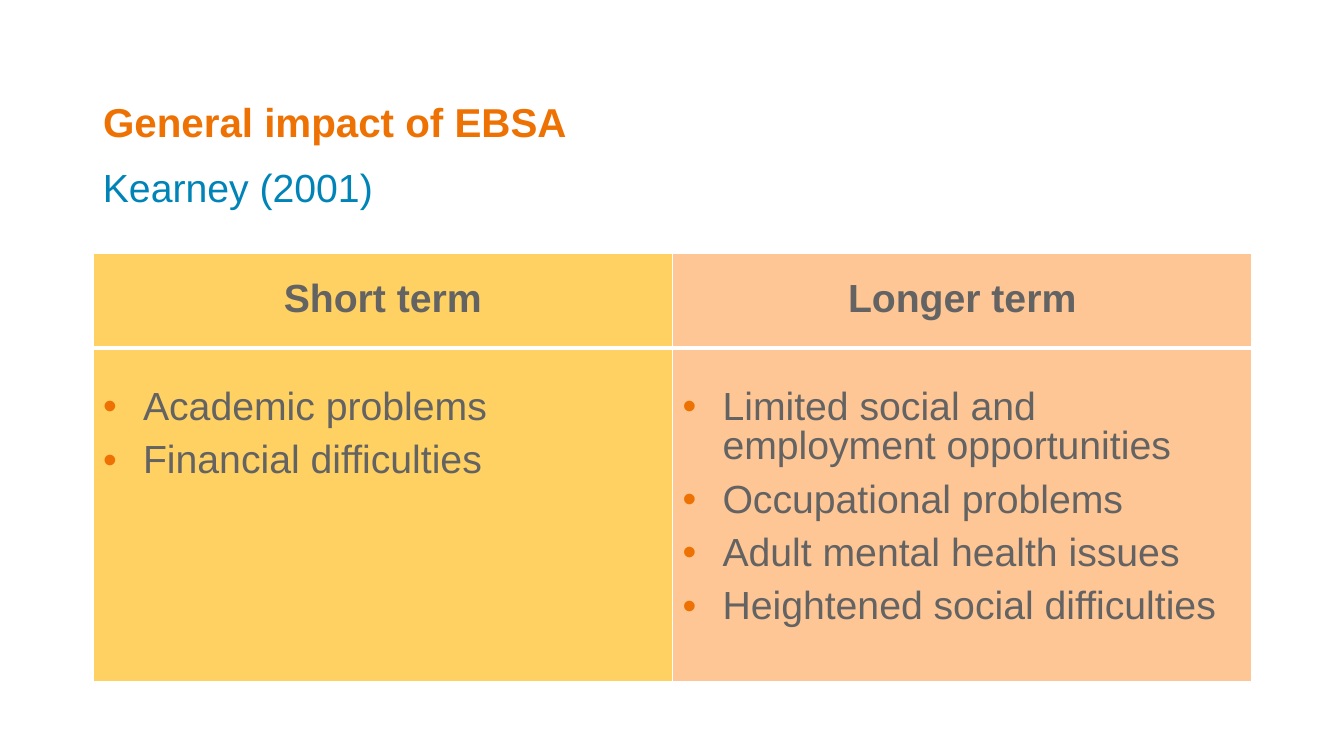
from dataclasses import dataclass
from typing import NamedTuple

from lxml.etree import SubElement
from pptx import Presentation
from pptx.dml.color import RGBColor as Color
from pptx.enum.text import MSO_ANCHOR as Anchor, PP_ALIGN as Align
from pptx.oxml.ns import qn
from pptx.util import Emu, Pt

SLIDE_WIDTH, SLIDE_HEIGHT = 1344, 756
EMU_PER_PX = 12192000 / SLIDE_WIDTH
TITLE_ONLY = 5


@dataclass(frozen=True)
class Theme:
    font: str = "Arial"
    orange: str = "EE7203"
    blue: str = "0084B7"
    grey: str = "646363"
    yellow: str = "FFD162"
    peach: str = "FEC695"
    white: str = "FFFFFF"
    title_size: float = 28.8
    body_size: float = 28
    para_gap: float = 10
    line_spacing: float = 0.9
    thin_rule: float = 1
    thick_rule: float = 3


class Box(NamedTuple):
    left: int
    top: int
    width: int
    height: int

    def emu(self):
        return [px(length) for length in self]


THEME = Theme()
IMPACTS = [
    ("Short term", THEME.yellow, ["Academic problems", "Financial difficulties"]),
    ("Longer term", THEME.peach, [
        "Limited social and employment opportunities",
        "Occupational problems",
        "Adult mental health issues",
        "Heightened social difficulties",
    ]),
]


def px(length):
    return Emu(round(length * EMU_PER_PX))


def write(para, text, size, color, bold=False, align=Align.LEFT):
    para.alignment = align
    para.line_spacing = THEME.line_spacing
    span = para.add_run()
    span.text = text
    span.font.name = THEME.font
    span.font.size = Pt(size)
    span.font.bold = bold
    span.font.color.rgb = Color.from_string(color)


def add_bullet(para, indent):
    properties = para._p.get_or_add_pPr()
    properties.set("marL", str(px(indent)))
    properties.set("indent", str(-px(indent)))
    color = SubElement(properties, qn("a:buClr"))
    SubElement(color, qn("a:srgbClr"), val=THEME.orange)
    SubElement(properties, qn("a:buFont"), typeface=THEME.font)
    SubElement(properties, qn("a:buChar"), char="•")


def format_cell(cell, fill, top_rule, bottom_rule):
    properties = cell._tc.get_or_add_tcPr()
    rules = {"L": THEME.thin_rule, "R": THEME.thin_rule, "T": top_rule, "B": bottom_rule}
    for side, width in rules.items():
        line = SubElement(properties, qn(f"a:ln{side}"), w=str(Pt(width)))
        paint = SubElement(line, qn("a:solidFill"))
        SubElement(paint, qn("a:srgbClr"), val=THEME.white)
    cell.fill.solid()
    cell.fill.fore_color.rgb = Color.from_string(fill)


def add_heading(slide, box):
    title = slide.shapes.title
    title.left, title.top, title.width, title.height = box._replace(height=56).emu()
    title.text_frame.word_wrap = True
    title.text_frame.vertical_anchor = Anchor.MIDDLE
    write(title.text_frame.paragraphs[0], "General impact of EBSA",
          THEME.title_size, THEME.orange, bold=True)

    source = slide.shapes.add_textbox(*box._replace(top=box.top + 68, height=45).emu())
    source.text_frame.word_wrap = True
    write(source.text_frame.paragraphs[0], "Kearney (2001)", THEME.body_size, THEME.blue)


def add_impact_table(slide, box, header_height):
    table = slide.shapes.add_table(2, len(IMPACTS), *box.emu()).table
    table.rows[0].height = px(header_height)
    table.rows[1].height = px(box.height - header_height)
    for column, (term, fill, problems) in enumerate(IMPACTS):
        table.columns[column].width = px(box.width / len(IMPACTS))

        header = table.cell(0, column)
        format_cell(header, fill, THEME.thin_rule, THEME.thick_rule)
        header.vertical_anchor = Anchor.MIDDLE
        write(header.text_frame.paragraphs[0], term, THEME.body_size, THEME.grey,
              bold=True, align=Align.CENTER)

        body = table.cell(1, column)
        format_cell(body, fill, THEME.thick_rule, THEME.thin_rule)
        body.margin_top = px(41)
        for index, problem in enumerate(problems):
            frame = body.text_frame
            para = frame.add_paragraph() if index else frame.paragraphs[0]
            add_bullet(para, 40)
            if index:
                para.space_before = Pt(THEME.para_gap)
            write(para, problem, THEME.body_size, THEME.grey)


def main():
    deck = Presentation()
    deck.slide_width, deck.slide_height = px(SLIDE_WIDTH), px(SLIDE_HEIGHT)
    slide = deck.slides.add_slide(deck.slide_layouts[TITLE_ONLY])
    add_heading(slide, Box(93, 96, 1159, 113))
    add_impact_table(slide, Box(93, 253, 1159, 429), 95)
    deck.save("out.pptx")


if __name__ == "__main__":
    main()
